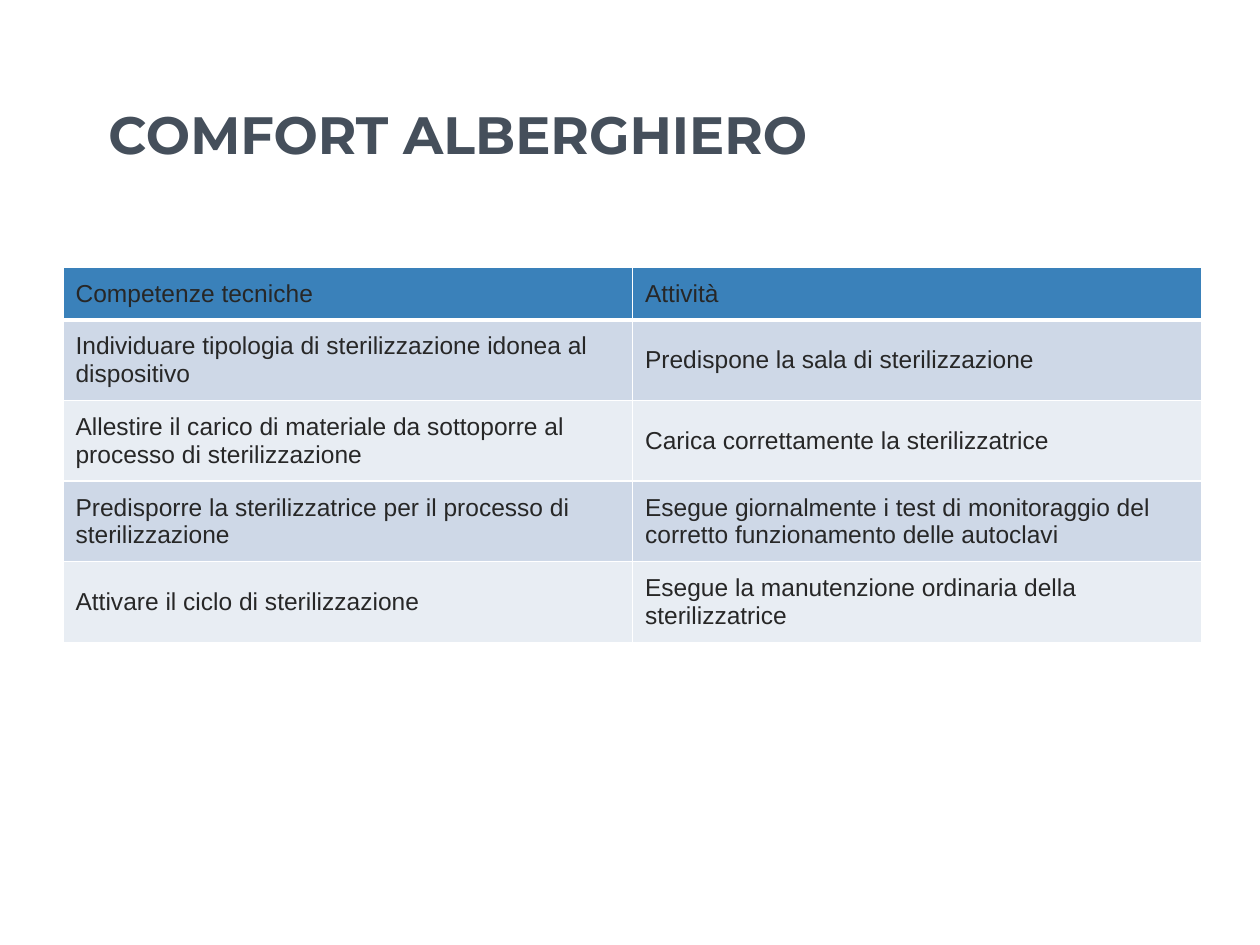
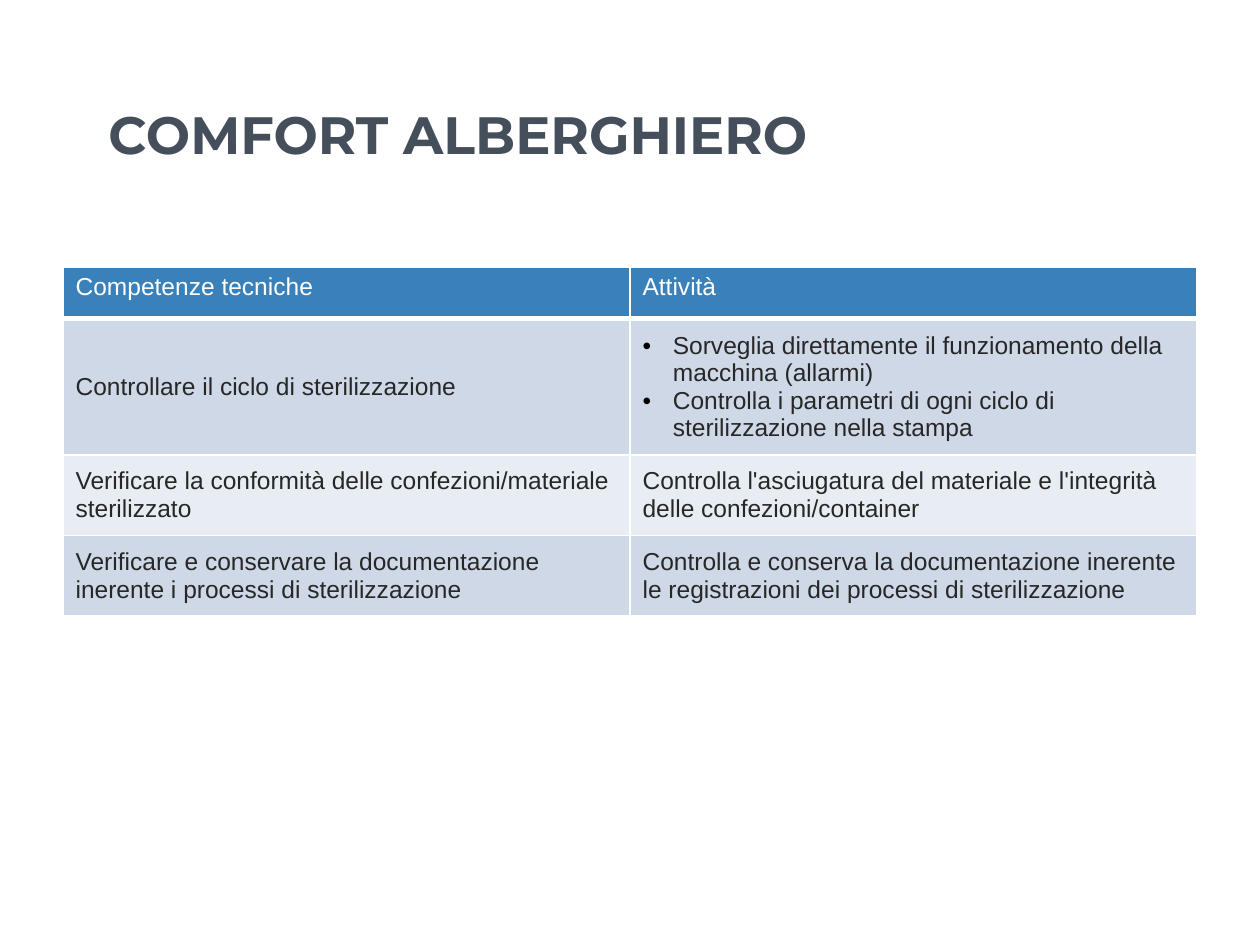
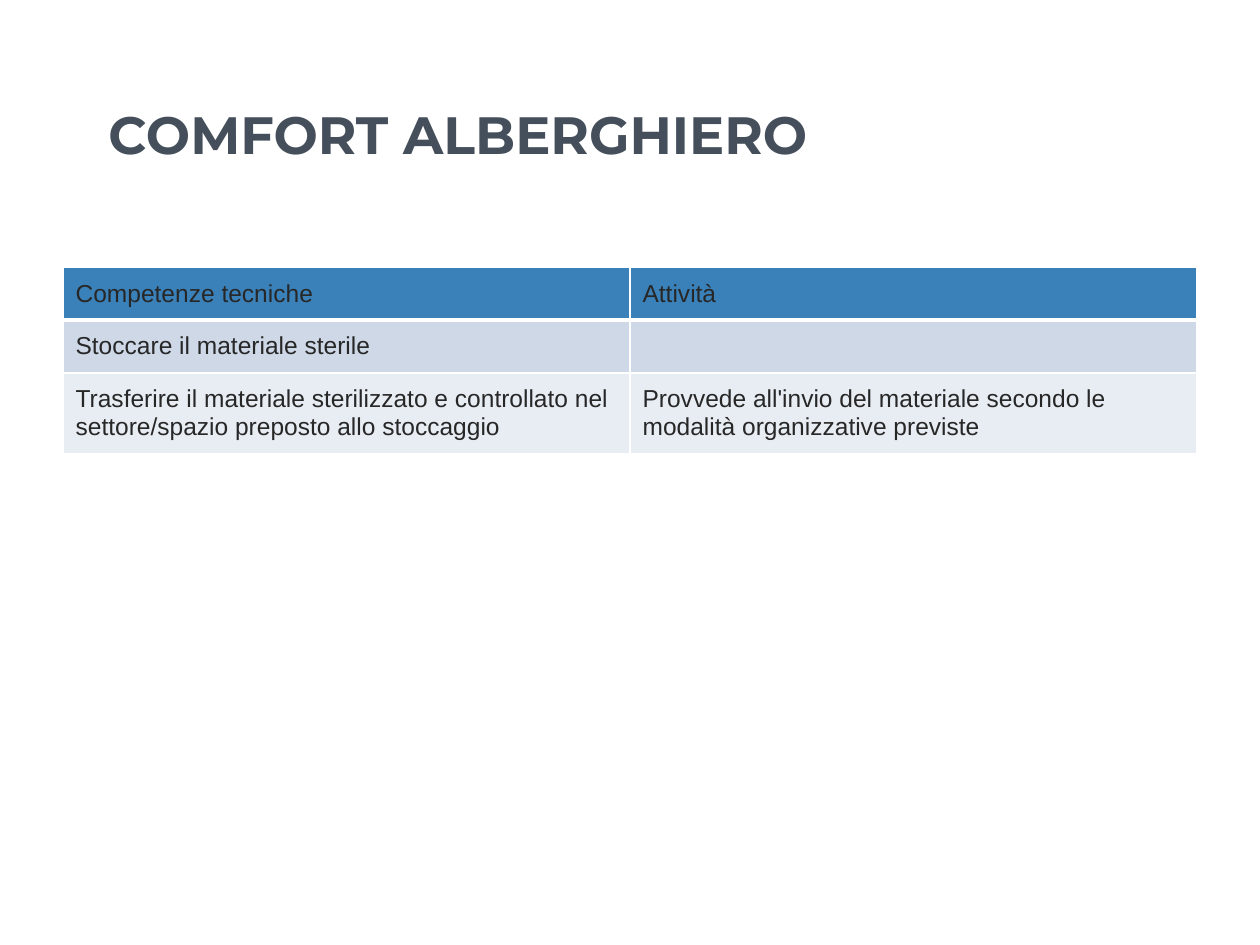
from dataclasses import dataclass

from lxml import etree
from pptx import Presentation
from pptx import util as u
from pptx.dml.color import RGBColor
from pptx.enum import text as t
from pptx.oxml.ns import qn


@dataclass(frozen=True)
class Theme:
    head: str = "3A81BA"
    bands: tuple[str, str] = ("CED8E7", "E8EDF3")
    white: str = "FFFFFF"
    ink: str = "272727"
    slate: str = "454F5B"
    dot: str = "000000"
    title: str = "Montserrat"
    body: str = "Arial"
    big: int = 30
    small: int = 14
    thin: int = 1
    thick: int = 3


@dataclass(frozen=True)
class Box:
    col: float
    row: float
    wide: float
    high: float


@dataclass(frozen=True)
class Row:
    skill: str
    tasks: tuple[str, ...]
    lines: int = 2


@dataclass(frozen=True)
class Page:
    rows: tuple[Row, ...]
    width: float = 18
    plain: bool = False


THEME = Theme()
COLS, ROWS = 40, 30
WIDE, HIGH = u.Inches(10), u.Inches(7.5)
TITLE = Box(3.04, 2.76, 33.96, 2.88)
LEFT, TOP = 2, 8.48
HEAD, LINE, PAD = 1.64, 0.88, 0.8
INSET, SLIM = u.Inches(0.1), u.Inches(0.05)
HANG = u.Inches(0.24)

PAGES = (
    Page((
        Row("Individuare tipologia di sterilizzazione idonea al dispositivo",
            ("Predispone la sala di sterilizzazione",)),
        Row("Allestire il carico di materiale da sottoporre al processo di sterilizzazione",
            ("Carica correttamente la sterilizzatrice",)),
        Row("Predisporre la sterilizzatrice per il processo di sterilizzazione",
            ("Esegue giornalmente i test di monitoraggio del corretto "
             "funzionamento delle autoclavi",)),
        Row("Attivare il ciclo di sterilizzazione",
            ("Esegue la manutenzione ordinaria della sterilizzatrice",)),
    ), width=18.08),
    Page((
        Row("Controllare il ciclo di sterilizzazione",
            ("Sorveglia direttamente il funzionamento della macchina (allarmi)",
             "Controlla i parametri di ogni ciclo di sterilizzazione nella stampa"), 4),
        Row("Verificare la conformità delle confezioni/materiale sterilizzato",
            ("Controlla l'asciugatura del materiale e l'integrità delle "
             "confezioni/container",)),
        Row("Verificare e conservare la documentazione inerente i processi di sterilizzazione",
            ("Controlla e conserva la documentazione inerente le registrazioni "
             "dei processi di sterilizzazione",)),
    ), plain=True),
    Page((
        Row("Stoccare il materiale sterile", (), 1),
        Row("Trasferire il materiale sterilizzato e controllato nel settore/spazio "
            "preposto allo stoccaggio",
            ("Provvede all'invio del materiale secondo le modalità organizzative previste",)),
    )),
)


def across(n: float) -> int:
    return round(n * WIDE / COLS)


def down(n: float) -> int:
    return round(n * HIGH / ROWS)


def style(para, name: str, size: int, color: str, bold: bool = False) -> None:
    font = para.font
    font.name, font.size, font.bold = name, u.Pt(size), bold
    font.color.rgb = RGBColor.from_string(color)


def bullet(para) -> None:
    props = para._p.get_or_add_pPr()
    props.set("marL", str(HANG))
    props.set("indent", str(-HANG))
    tint = etree.SubElement(props, qn("a:buClr"))
    etree.SubElement(tint, qn("a:srgbClr"), val=THEME.dot)
    etree.SubElement(props, qn("a:buFont"), typeface=THEME.body)
    etree.SubElement(props, qn("a:buChar"), char="•")


def border(cell, base: int) -> None:
    props = cell._tc.get_or_add_tcPr()
    for side in "LRTB":
        size = base if side == "B" else THEME.thin
        line = etree.SubElement(props, qn(f"a:ln{side}"), w=str(u.Pt(size)))
        fill = etree.SubElement(line, qn("a:solidFill"))
        etree.SubElement(fill, qn("a:srgbClr"), val=THEME.white)


def draw_cell(cell, items: tuple[str, ...], fill: str, color: str,
              plain: bool = False, base: int = THEME.thin) -> None:
    border(cell, base)
    cell.fill.solid()
    cell.fill.fore_color.rgb = RGBColor.from_string(fill)
    cell.margin_left = cell.margin_right = INSET
    cell.margin_top = cell.margin_bottom = SLIM if plain else INSET
    cell.vertical_anchor = t.MSO_ANCHOR.TOP if plain else t.MSO_ANCHOR.MIDDLE
    cell.text_frame.text = "\n".join(items)
    for para in cell.text_frame.paragraphs:
        if len(items) > 1:
            bullet(para)
        style(para, THEME.body, THEME.small, color)


def draw_title(shape) -> None:
    shape.left, shape.top = across(TITLE.col), down(TITLE.row)
    shape.width, shape.height = across(TITLE.wide), down(TITLE.high)
    frame = shape.text_frame
    frame.text = "COMFORT ALBERGHIERO"
    frame.word_wrap = True
    frame.auto_size = t.MSO_AUTO_SIZE.NONE
    frame.vertical_anchor = t.MSO_ANCHOR.BOTTOM
    frame.margin_left = frame.margin_right = INSET
    frame.margin_top = frame.margin_bottom = INSET
    para = frame.paragraphs[0]
    para.alignment = t.PP_ALIGN.LEFT
    style(para, THEME.title, THEME.big, THEME.slate, True)


def draw_table(slide, page: Page) -> None:
    highs = [HEAD] + [PAD + LINE * row.lines for row in page.rows]
    grid = slide.shapes.add_table(
        len(highs), 2, across(LEFT), down(TOP),
        across(2 * page.width), down(sum(highs))).table
    grid.first_row = grid.horz_banding = False
    for row, high in zip(grid.rows, highs):
        row.height = down(high)
    color = THEME.white if page.plain else THEME.ink
    for col, label in enumerate(("Competenze tecniche", "Attività")):
        draw_cell(grid.cell(0, col), (label,), THEME.head, color,
                  page.plain, THEME.thick)
    for num, row in enumerate(page.rows):
        for col, items in enumerate(((row.skill,), row.tasks)):
            draw_cell(grid.cell(num + 1, col), items, THEME.bands[num % 2], THEME.ink)


def main() -> None:
    deck = Presentation()
    deck.slide_width, deck.slide_height = WIDE, HIGH
    for page in PAGES:
        slide = deck.slides.add_slide(deck.slide_layouts[5])
        draw_title(slide.shapes.title)
        draw_table(slide, page)
    deck.save("out.pptx")


if __name__ == "__main__":
    main()
